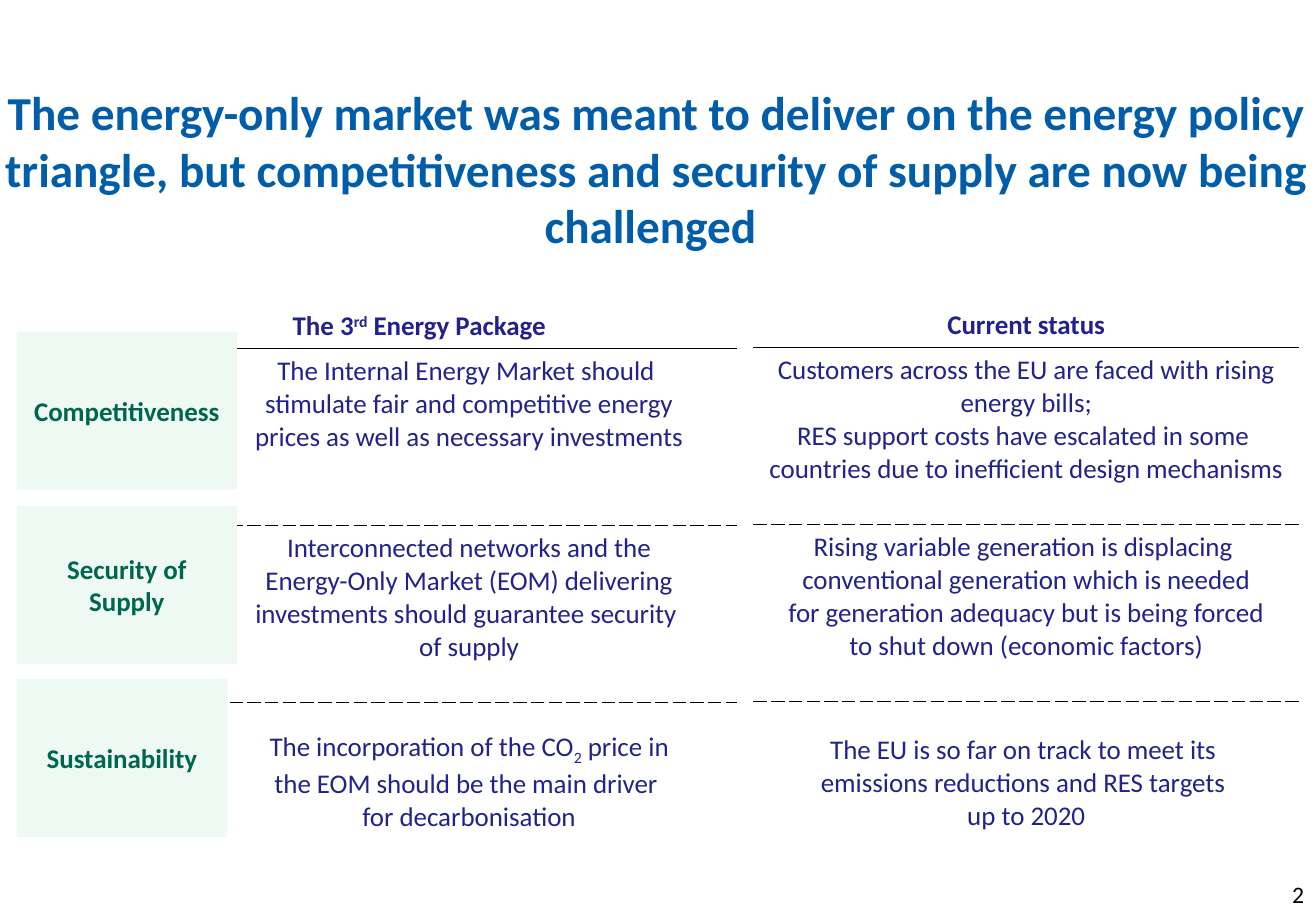
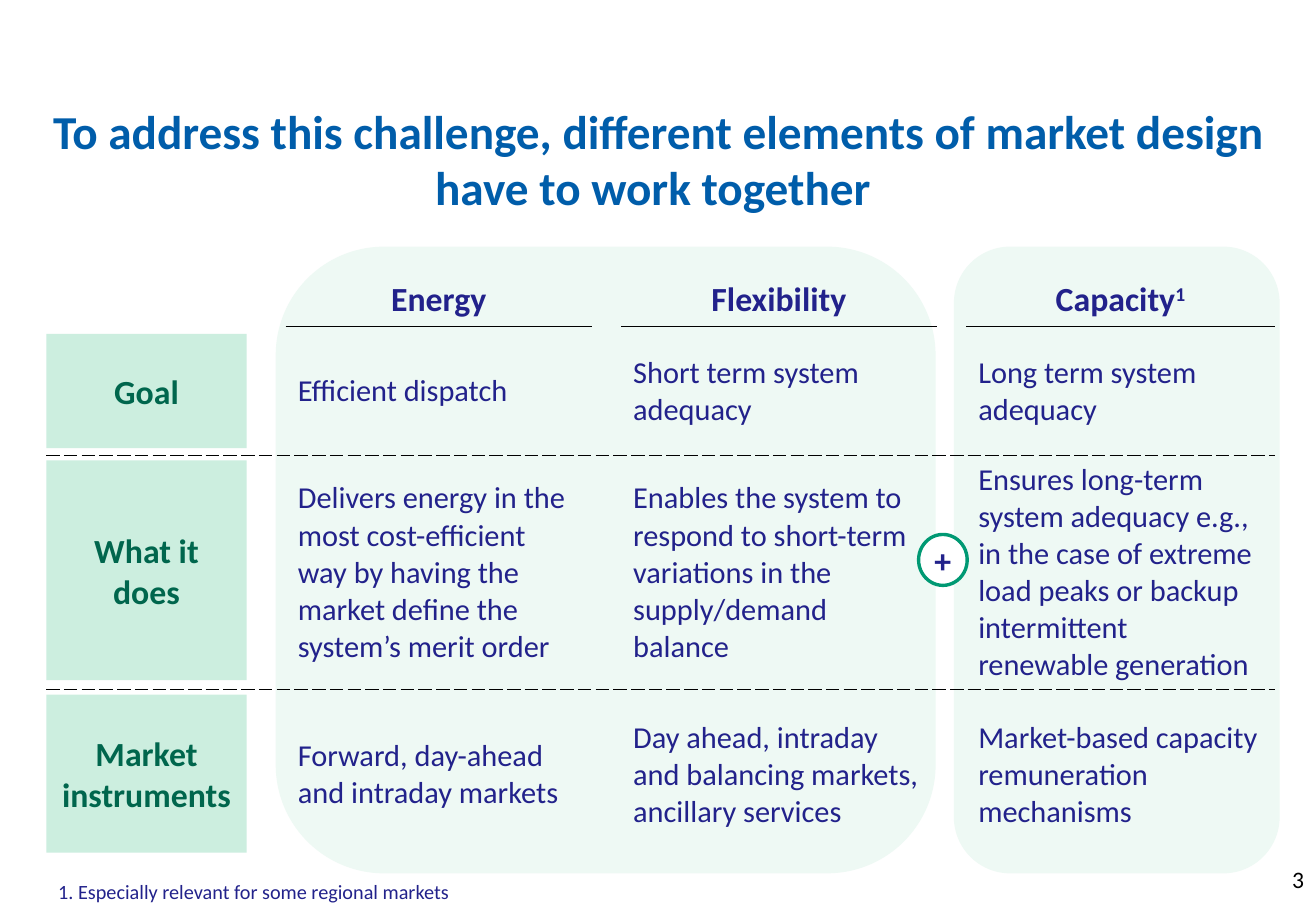
from lxml import etree
from pptx import Presentation
from pptx.dml.color import RGBColor
from pptx.enum.shapes import MSO_SHAPE
from pptx.enum.text import MSO_ANCHOR, PP_ALIGN
from pptx.oxml.ns import qn
from pptx.util import Pt

LEFT, CENTER, RIGHT = PP_ALIGN.LEFT, PP_ALIGN.CENTER, PP_ALIGN.RIGHT
TOP, MIDDLE, BOTTOM = MSO_ANCHOR.TOP, MSO_ANCHOR.MIDDLE, MSO_ANCHOR.BOTTOM
RECT, ROUNDED, OVAL = MSO_SHAPE.RECTANGLE, MSO_SHAPE.ROUNDED_RECTANGLE, MSO_SHAPE.OVAL

COLORS = {
    "title": "005DAA", "text": "22228B", "label": "00664D", "ring": "009973",
    "pale": "EEF9F4", "mint": "CCEEDF", "black": "000000", "white": "FFFFFF",
}
FONT = "Calibri"
SUPER, SUB = 30000, -25000
LINE_16 = 19.5  # height of one line of 16 pt text


def rgb(name):
    return RGBColor.from_string(COLORS[name])


class Deck:
    """Shared style, and the slide being filled."""

    def __init__(self, width, height):
        self.prs = Presentation()
        self.prs.slide_width, self.prs.slide_height = Pt(width), Pt(height)
        self.slide = None

    def new_slide(self):
        self.slide = self.prs.slides.add_slide(self.prs.slide_layouts[6])

    def fill_text(self, frame, paragraphs, size, color="text", bold=False, align=LEFT):
        """Fill a frame; a paragraph is a string or a list of strings and (string, baseline)."""
        style = {"name": FONT, "size": Pt(size), "bold": bold}
        for index, content in enumerate(paragraphs):
            paragraph = frame.add_paragraph() if index else frame.paragraphs[0]
            paragraph.alignment = align
            for part in [content] if isinstance(content, str) else content:
                words, baseline = (part, 0) if isinstance(part, str) else part
                run = paragraph.add_run()
                run.text = words
                for key, value in style.items():
                    setattr(run.font, key, value)
                run.font.color.rgb = rgb(color)
                if baseline:
                    run._r.get_or_add_rPr().set("baseline", str(baseline))

    def text(self, box, words, size, color="text", bold=False, align=LEFT,
             anchor=MIDDLE, wrap=True):
        frame = self.slide.shapes.add_textbox(*map(Pt, box)).text_frame
        frame.word_wrap, frame.vertical_anchor = wrap, anchor
        self.fill_text(frame, [words], size, color, bold, align)

    def title(self, box, words):
        self.text(box, words, 28, "title", True, CENTER)

    def number(self, top, digits):
        self.text((758, top, 21.8, 36), digits, 14, "black", align=RIGHT, wrap=False)

    def shape(self, kind, box, fill, line=None):
        shape = self.slide.shapes.add_shape(kind, *map(Pt, box))
        shape.shadow.inherit = False
        shape.fill.solid()
        shape.fill.fore_color.rgb = rgb(fill)
        if line:
            shape.line.color.rgb, shape.line.width = rgb(line), Pt(2)
        else:
            shape.line.fill.background()
        return shape

    def label(self, box, words, size, fill):
        frame = self.shape(RECT, box, fill).text_frame
        frame.word_wrap, frame.vertical_anchor = True, MIDDLE
        self.fill_text(frame, [words], size, "label", True, CENTER)

    def panel(self, box):
        self.shape(ROUNDED, box, "pale").adjustments[0] = 0.173

    def badge(self, box, words):
        frame = self.shape(OVAL, box, "white", "ring").text_frame
        frame.word_wrap, frame.vertical_anchor = False, MIDDLE
        self.fill_text(frame, [words], 20, bold=True, align=CENTER)

    def border(self, cell, side, dash):
        line = etree.SubElement(cell._tc.get_or_add_tcPr(), qn(f"a:ln{side}"), w=str(Pt(0.75)))
        if dash is None:
            etree.SubElement(line, qn("a:noFill"))
            return
        fill = etree.SubElement(line, qn("a:solidFill"))
        etree.SubElement(fill, qn("a:srgbClr"), val=COLORS["black"])
        etree.SubElement(line, qn("a:prstDash"), val=dash)

    def table(self, left, top, widths, heights, rows, sizes, align):
        """Rows of cells, each a list of paragraphs; solid rule below headings, dashed below rows."""
        table = self.slide.shapes.add_table(
            len(rows), len(widths), Pt(left), Pt(top), Pt(sum(widths)), Pt(sum(heights))).table
        table.first_row = table.horz_banding = False
        for column, width in zip(table.columns, widths):
            column.width = Pt(width)
        for row, height in zip(table.rows, heights):
            row.height = Pt(height)

        def rule_below(r, c):
            if r < 0 or r == len(rows) - 1:
                return None
            if r == 0:
                return "solid" if rows[0][c] else None
            return "dash"

        for r, row in enumerate(rows):
            for c, paragraphs in enumerate(row):
                cell, heading = table.cell(r, c), r == 0
                rules = {"L": None, "R": None, "T": rule_below(r - 1, c), "B": rule_below(r, c)}
                for side, dash in rules.items():
                    self.border(cell, side, dash)
                cell.fill.background()
                cell.vertical_anchor = BOTTOM if heading else MIDDLE
                if paragraphs:
                    self.fill_text(cell.text_frame, paragraphs, sizes[0] if heading else sizes[1],
                                   bold=heading, align=CENTER if heading else align)
                else:
                    cell.margin_top = cell.margin_bottom = 0
        return table


def lift(table, column, lines_by_row):
    """Raise cell text by leaving room for some lines below it."""
    for row, lines in lines_by_row.items():
        table.cell(row, column).margin_bottom = Pt(3.6 + lines * LINE_16)


def policy_triangle(deck):
    deck.new_slide()
    deck.title((-5, 60.5, 787, 78.5),
               "The energy-only market was meant to deliver on the energy policy triangle, "
               "but competitiveness and security of supply are now being challenged ")

    # Energy package column, with room for the labels
    package = [
        [["The 3", ("rd", SUPER), " Energy Package"]],
        ["The Internal Energy Market should ",
         "stimulate fair and competitive energy",
         "prices as well as necessary investments"],
        ["Interconnected networks and the",
         "Energy-Only Market (EOM) delivering",
         "investments should guarantee security ",
         "of supply"],
        [["The incorporation of the CO", ("2", SUB), " price in"],
         "the EOM should be the main driver ",
         "for decarbonisation"],
    ]
    table = deck.table(10, 180, [92, 16.8, 317.5], [26.7, 104.8, 104.8, 95],
                       [[[], [], cell] for cell in package], (16, 16), CENTER)
    lift(table, 2, {1: 2, 2: 1})
    heading = table.cell(0, 2)
    heading.margin_left = Pt(54.2)
    heading.text_frame.paragraphs[0].alignment = LEFT

    # Policy goals
    for top, width, goal in [(196.6, 130.3, "Competitiveness"),
                             (300, 130.3, "Security of Supply"),
                             (402.5, 124.6, "Sustainability")]:
        deck.label((10, top, width, 93.6), goal, 16, "pale")
    deck.number(512, "2")

    # Current status column
    status = [
        ["Current status"],
        ["Customers across the EU are faced with rising energy bills;",
         "RES support costs have escalated in some ",
         "countries due to inefficient design mechanisms"],
        ["Rising variable generation is displacing ",
         "conventional generation which is needed",
         "for generation adequacy but is being forced",
         "to shut down (economic factors)"],
        ["The EU is so far on track to meet its ",
         "emissions reductions and RES targets ",
         "up to 2020"],
    ]
    table = deck.table(446.4, 179.3, [323.3], [26.7, 104.8, 104.8, 97.2],
                       [[cell] for cell in status], (16, 16), CENTER)
    lift(table, 0, {1: 1, 2: 1})


def market_design(deck):
    deck.new_slide()
    for left, width in [(565.2, 193), (163.4, 391)]:
        deck.panel((left, 146.2, width, 371.5))
    deck.title((0, 54.7, 779.8, 78.5),
               "To address this challenge, different elements of market design "
               "have to work together ")

    # Market elements, with narrow gap columns between them
    elements = [
        ["Energy", "Flexibility", ["Capacity", ("1", SUPER)]],
        ["Efficient dispatch", "Short term system adequacy", "Long term system adequacy"],
        ["Delivers energy in the most cost-efficient way by having the market define "
         "the system’s merit order",
         "Enables the system to respond to short-term variations in the supply/demand balance",
         "Ensures long-term system adequacy e.g., in the case of extreme load peaks or backup "
         "intermittent renewable generation"],
        ["Forward, day-ahead and intraday markets",
         "Day ahead, intraday and balancing markets, ancillary services",
         "Market-based capacity remuneration mechanisms"],
    ]
    rows = [[[]] + [cell for words in row for cell in ([], [words])] for row in elements]
    gap = 17.3
    deck.table(27.4, 162, [124.6, gap, 181.4, gap, 187.2, gap, 182.9],
               [31.7, 76.3, 139, 100.8], rows, (20, 18), LEFT)

    # Row labels
    for top, height, aspect in [(198, 67.7, "Goal"), (272.9, 130.3, "What it does"),
                                (411.8, 93.6, "Market instruments")]:
        deck.label((27.4, top, 118.8, height), aspect, 20, "mint")

    deck.number(503.3, "3")
    deck.badge((544.3, 316.8, 28.8, 30.2), "+")
    deck.text((27.4, 517.7, 720, 21.6), "1. Especially relevant for some regional markets",
              12, anchor=TOP)


def main():
    deck = Deck(779.76, 540)
    policy_triangle(deck)
    market_design(deck)
    deck.prs.save("out.pptx")


if __name__ == "__main__":
    main()
